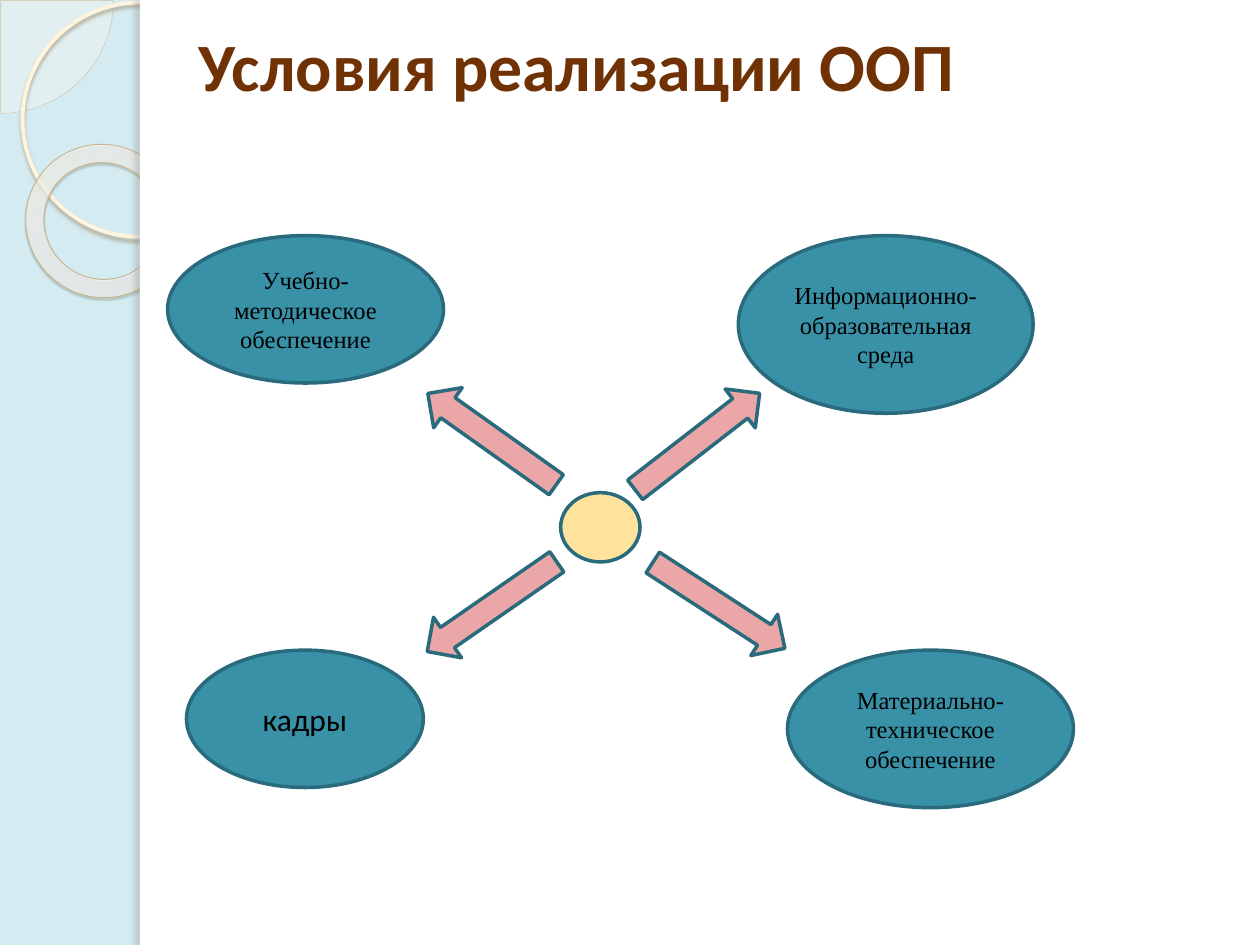
from lxml import etree
from pptx import Presentation
from pptx import util as u
from pptx.dml.color import RGBColor
from pptx.enum import shapes, text
from pptx.oxml import ns, parse_xml

WIDTH, HEIGHT = u.Inches(10), u.Inches(7.5)
COLUMNS, ROWS = 1000, 750
KIND = shapes.MSO_SHAPE
EDGE = "296B7C"
SERIF, SANS = "Times New Roman", "Calibri"


def colour(code):
    """Turn a hex string into a colour."""
    return RGBColor.from_string(code)


def grid(left, top, width, height):
    """Turn grid columns and rows into slide lengths."""
    column, row = WIDTH / COLUMNS, HEIGHT / ROWS
    return [round(length) for length in (left * column, top * row, width * column, height * row)]


def add_shape(page, kind, area, fill=None, line=None, weight=2, turn=0):
    """Add a preset shape with a plain fill and outline."""
    shape = page.shapes.add_shape(kind, *grid(*area))
    shape.shadow.inherit = False
    shape.rotation = turn
    if fill:
        shape.fill.solid()
        shape.fill.fore_color.rgb = colour(fill)
    else:
        shape.fill.background()
    if line:
        shape.line.color.rgb = colour(line)
        shape.line.width = u.Pt(weight)
    else:
        shape.line.fill.background()
    return shape


def add_colour(parent, code, opacity):
    """Append a colour with an opacity in percent to an XML element."""
    tone = etree.SubElement(parent, ns.qn("a:srgbClr"), val=code)
    etree.SubElement(tone, ns.qn("a:alpha"), val=str(opacity * 1000))


def add_shadow(shape, code, opacity, blur, distance, angle):
    """Give a shape an outer shadow."""
    effects = shape._element.spPr.find(ns.qn("a:effectLst"))
    shadow = etree.SubElement(
        effects, ns.qn("a:outerShdw"), blurRad=str(u.Pt(blur)),
        dist=str(u.Pt(distance)), dir=str(angle * 60000), rotWithShape="0")
    add_colour(shadow, code, opacity)


def fill_radial(shape, stops, focus):
    """Replace a shape's fill by a circular gradient."""
    gradient = parse_xml(f'<a:gradFill {ns.nsdecls("a")} rotWithShape="1"/>')
    steps = etree.SubElement(gradient, ns.qn("a:gsLst"))
    for position, code, opacity in stops:
        add_colour(etree.SubElement(steps, ns.qn("a:gs"), pos=str(position * 1000)), code, opacity)
    circle = etree.SubElement(gradient, ns.qn("a:path"), path="circle")
    sides = {side: str(share * 1000) for side, share in zip("ltrb", focus)}
    etree.SubElement(circle, ns.qn("a:fillToRect"), **sides)
    properties = shape._element.spPr
    properties.replace(properties.find(ns.qn("a:solidFill")), gradient)


def write(shape, words, size, font, code="000000", bold=False, align=text.PP_ALIGN.CENTER):
    """Write one formatted paragraph into a shape."""
    frame = shape.text_frame
    frame.word_wrap = True
    frame.vertical_anchor = text.MSO_ANCHOR.MIDDLE
    frame.text = words
    para = frame.paragraphs[0]
    para.alignment = align
    span = para.runs[0]
    span.font.size = u.Pt(size)
    span.font.name = font
    span.font.bold = bold
    span.font.color.rgb = colour(code)


def add_backdrop(page):
    """Draw the side band with its rings and the white panel."""
    page.background.fill.solid()
    page.background.fill.fore_color.rgb = colour("D4EBF1")
    quarter = add_shape(page, KIND.PIE, (-89, -89, 179, 179), "FEFAF4", "D3C39F", 0.25)
    quarter.adjustments[0], quarter.adjustments[1] = 0, 54
    tone = quarter._element.spPr.find(ns.qn("a:solidFill"))[0]
    etree.SubElement(tone, ns.qn("a:alpha"), val="33000")
    ring = add_shape(page, KIND.OVAL, (18, 2, 186, 186), None, "FFF5DE", 2.15)
    add_shadow(ring, "B0A68F", 85, 2, 2, 90)
    donut = add_shape(page, KIND.DONUT, (20, 115, 123, 121), "FFFCF6", "C7B893", 0.58, 38.6)
    donut.adjustments[0] = 0.12
    stops = [(0, "FFFCF6", 70), (70, "FFFEFB", 55), (100, "F0D28E", 60)]
    fill_radial(donut, stops, (-408, -50, 508, 150))
    add_shadow(donut, "5A5444", 35, 1, 1.2, 75)
    add_shape(page, KIND.RECTANGLE, (111, 0, 889, ROWS), "FFFFFF")
    strip = add_shape(page, KIND.RECTANGLE, (111, 0, 8, ROWS), "FFFFFF")
    add_shadow(strip, "736F63", 25, 3, 3, 180)


def add_title(page, words):
    """Add the heading."""
    box = page.shapes.add_textbox(*grid(148, 23, 710, 56))
    write(box, words, 38.7, SANS, "703204", True, text.PP_ALIGN.LEFT)


def add_condition(page, area, words, size=14, font=SERIF):
    """Add a labelled oval for one condition."""
    write(add_shape(page, KIND.OVAL, area, "3891A7", EDGE), words, size, font)


def add_arrow(page, left, top, turn):
    """Add a block arrow leading out from the hub."""
    add_shape(page, KIND.RIGHT_ARROW, (left, top, 125, 39), "EBA7A8", EDGE, turn=turn)


def main():
    """Build the slide and save it."""
    deck = Presentation()
    deck.slide_width, deck.slide_height = WIDTH, HEIGHT
    page = deck.slides.add_slide(deck.slide_layouts[6])
    add_backdrop(page)
    add_title(page, "Условия реализации ООП")
    add_shape(page, KIND.OVAL, (445, 391, 63, 55), "FFE39D", EDGE)
    upper, lower = 187, 516
    add_condition(page, (133, upper, 219, 117), "Учебно-методическое обеспечение")
    add_condition(page, (148, lower, 188, 109), "кадры", 18, SANS)
    add_condition(page, (586, upper, 234, 141), "Информационно-образовательная среда")
    add_condition(page, (625, lower, 227, 125), "Материально-техническое обеспечение")
    for left, top, turn in [(508, 461, 33), (328, 329, 215.4), (328, 462, 145.3), (491, 331, 322.2)]:
        add_arrow(page, left, top, turn)
    deck.save("out.pptx")


if __name__ == "__main__":
    main()
